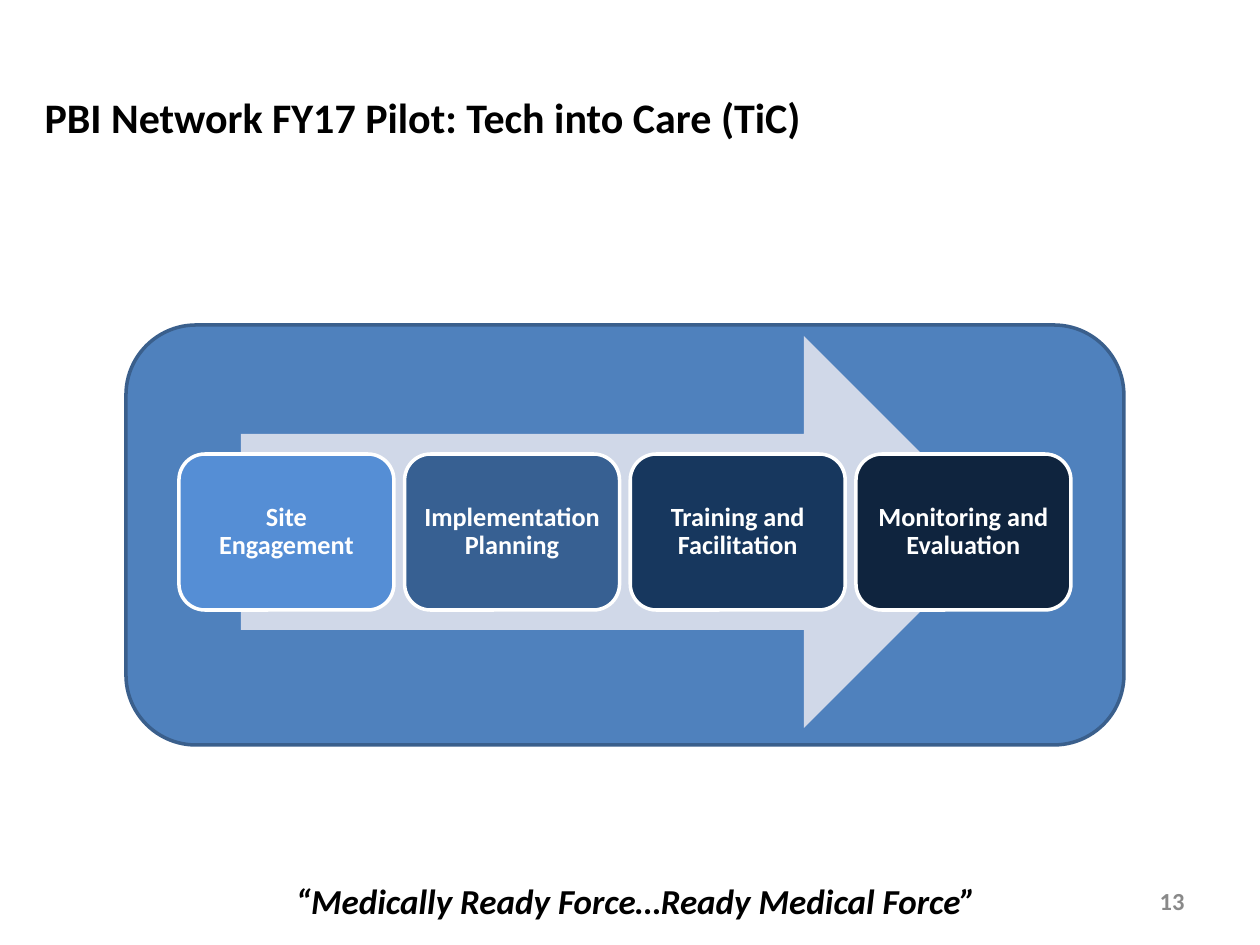
import pptx
import pptx.dml.color
import pptx.enum.shapes
import pptx.enum.text
import pptx.util

RGBColor = pptx.dml.color.RGBColor
ShapeType = pptx.enum.shapes.MSO_SHAPE
Align = pptx.enum.text.PP_ALIGN

PX = pptx.util.Inches(1) // 126
BLACK = RGBColor(0x00, 0x00, 0x00)
WHITE = RGBColor(0xFF, 0xFF, 0xFF)
GREY = RGBColor(0x89, 0x89, 0x89)
PANEL_FILL = RGBColor(0x4F, 0x81, 0xBD)
PANEL_LINE = RGBColor(0x3A, 0x5F, 0x8C)
ARROW_FILL = RGBColor(0xD0, 0xD8, 0xE8)

STEPS = [
    ("Site\vEngagement", RGBColor(0x55, 0x8E, 0xD5)),
    ("Implementation Planning", RGBColor(0x37, 0x60, 0x92)),
    ("Training and Facilitation", RGBColor(0x17, 0x37, 0x5E)),
    ("Monitoring and Evaluation", RGBColor(0x0F, 0x24, 0x3E)),
]


def to_emu(*lengths):
    return [round(length * PX) for length in lengths]


def write_text(shape, text, size, color, alignment, **font_values):
    frame = shape.text_frame
    frame.word_wrap = True
    frame.auto_size = pptx.enum.text.MSO_AUTO_SIZE.NONE
    frame.vertical_anchor = pptx.enum.text.MSO_ANCHOR.MIDDLE
    frame.text = text
    paragraph = frame.paragraphs[0]
    paragraph.alignment = alignment
    paragraph.font.color.rgb = color
    values = {"name": "Calibri", "size": pptx.util.Pt(size), "bold": True}
    for name, value in {**values, **font_values}.items():
        setattr(paragraph.font, name, value)
    return paragraph


def add_block(slide, kind, box, fill, line=None):
    shape = slide.shapes.add_shape(kind, *to_emu(*box))
    shape.shadow.inherit = False
    shape.fill.solid()
    shape.fill.fore_color.rgb = fill
    if line is None:
        shape.line.fill.background()
    else:
        shape.line.color.rgb = line
        shape.line.width = pptx.util.Pt(2)
    return shape


def add_title(slide, box, text):
    title = slide.shapes.title
    title.left, title.top, title.width, title.height = to_emu(*box)
    write_text(title, text, 24, BLACK, Align.LEFT)


def add_process(slide, box):
    left, top, width, height = box
    # Panel and arrow behind the steps
    add_block(slide, ShapeType.ROUNDED_RECTANGLE, box, PANEL_FILL, PANEL_LINE)
    add_block(slide, ShapeType.RIGHT_ARROW,
              (left + 115, top + 11, 759, 392), ARROW_FILL)

    # Steps, spread evenly between equal side margins
    margin, step_width, step_height = 53, 215, 156
    pitch = (width - 2 * margin - step_width) / (len(STEPS) - 1)
    for index, (label, fill) in enumerate(STEPS):
        step_box = (left + margin + index * pitch, top + 129,
                    step_width, step_height)
        step = add_block(slide, ShapeType.ROUNDED_RECTANGLE, step_box, fill, WHITE)
        for side in ("left", "top", "right", "bottom"):
            setattr(step.text_frame, f"margin_{side}", 8 * PX)
        write_text(step, label, 15, WHITE, Align.CENTER).line_spacing = 0.9


def add_footer(slide, box):
    left, top, width, height = box
    motto = slide.shapes.add_textbox(*to_emu(left, top, 788, height))
    write_text(motto, "“Medically Ready Force…Ready Medical Force”",
               20, BLACK, Align.CENTER, italic=True)
    number_width = 147
    number = slide.shapes.add_textbox(
        *to_emu(left + width - number_width, top, number_width, height))
    write_text(number, "13", 14, GREY, Align.RIGHT)


def main():
    presentation = pptx.Presentation()
    presentation.slide_width, presentation.slide_height = to_emu(1260, 945)
    slide = presentation.slides.add_slide(presentation.slide_layouts[5])
    add_title(slide, (32, 38, 935, 158), "PBI Network FY17 Pilot: Tech into Care (TiC)")
    add_process(slide, (126, 325, 998, 420))
    add_footer(slide, (242, 876, 955, 50))
    presentation.save("out.pptx")


if __name__ == "__main__":
    main()
